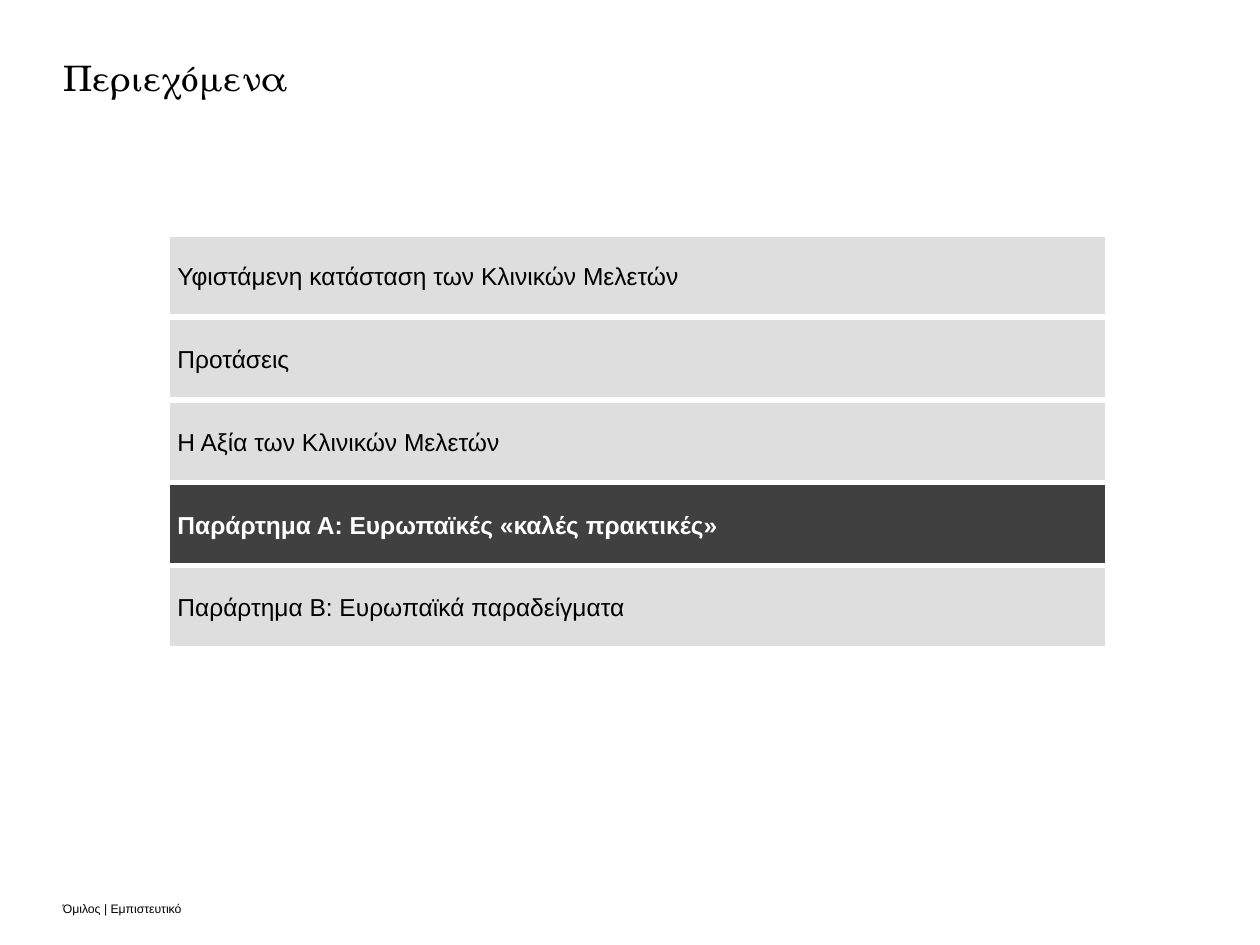
from dataclasses import dataclass

from pptx import Presentation
from pptx.dml.color import RGBColor
from pptx.enum.shapes import MSO_SHAPE
from pptx.enum.text import MSO_ANCHOR, MSO_AUTO_SIZE, PP_ALIGN
from pptx.util import Pt

RECT = MSO_SHAPE.RECTANGLE
TOP, MIDDLE, BOTTOM = MSO_ANCHOR.TOP, MSO_ANCHOR.MIDDLE, MSO_ANCHOR.BOTTOM
LEFT = PP_ALIGN.LEFT
FIXED = MSO_AUTO_SIZE.NONE


@dataclass(frozen=True)
class Theme:
    """Colours, fonts and type sizes of the slide."""
    ink: RGBColor = RGBColor(0x00, 0x00, 0x00)
    paper: RGBColor = RGBColor(0xFF, 0xFF, 0xFF)
    pale: RGBColor = RGBColor(0xDE, 0xDE, 0xDE)
    dark: RGBColor = RGBColor(0x40, 0x40, 0x40)
    serif: str = "TeX Gyre Schola"
    sans: str = "Arial"
    title: int = 20
    item: int = 14
    foot: int = 7


THEME = Theme()
ITEMS = [
    "Υφιστάμενη κατάσταση των Κλινικών Μελετών",
    "Προτάσεις",
    "Η Αξία των Κλινικών Μελετών",
    "Παράρτημα Α: Ευρωπαϊκές «καλές πρακτικές»",
    "Παράρτημα Β: Ευρωπαϊκά παραδείγματα",
]
ACTIVE = 3


def write(shape, text, face, size, color, anchor, pads=(0, 0, 0, 0), wrap=True, bold=False):
    """Put one left-aligned paragraph into a shape and return it."""
    frame = shape.text_frame
    frame.text = text
    frame.auto_size = FIXED
    frame.word_wrap = wrap
    frame.vertical_anchor = anchor
    (frame.margin_left, frame.margin_top,
     frame.margin_right, frame.margin_bottom) = map(Pt, pads)
    para = frame.paragraphs[0]
    para.alignment = LEFT
    font = para.runs[0].font
    font.name, font.size, font.bold = face, Pt(size), bold
    font.color.rgb = color
    return para


def add_title(slide, box, text):
    """Place the title in its box."""
    title = slide.shapes.title
    title.left, title.top, title.width, title.height = map(Pt, box)
    para = write(title, text, THEME.serif, THEME.title, THEME.ink, TOP)
    para.line_spacing = 0.85


def add_agenda(slide, box, items, active):
    """Stack equal bars in the box and mark the active one."""
    left, top, width, height = box
    step = height / len(items)
    for row, text in enumerate(items):
        on = row == active
        place = (left, top + row * step, width, step)
        bar = slide.shapes.add_shape(RECT, *map(Pt, place))
        bar.shadow.inherit = False
        bar.fill.solid()
        bar.fill.fore_color.rgb = THEME.dark if on else THEME.pale
        bar.line.color.rgb = THEME.paper
        bar.line.width = Pt(3)
        write(bar, text, THEME.sans, THEME.item, THEME.paper if on else THEME.ink,
              MIDDLE, (5.67, 15, 0, 15), False, on)


def add_footer(slide, box, text):
    """Place the footer line in its box."""
    foot = slide.shapes.add_textbox(*map(Pt, box))
    write(foot, text, THEME.sans, THEME.foot, THEME.ink, BOTTOM)


def main():
    """Build and save the contents slide."""
    deck = Presentation()
    deck.slide_width, deck.slide_height = Pt(720), Pt(540)
    slide = deck.slides.add_slide(deck.slide_layouts.get_by_name("Title Only"))
    add_footer(slide, (36, 512.5, 313, 11), "Όμιλος | Εμπιστευτικό")
    add_title(slide, (36, 36, 648, 36.5), "Περιεχόμενα")
    add_agenda(slide, (95.75, 133.9, 537, 236.75), ITEMS, ACTIVE)
    deck.save("out.pptx")


if __name__ == "__main__":
    main()
